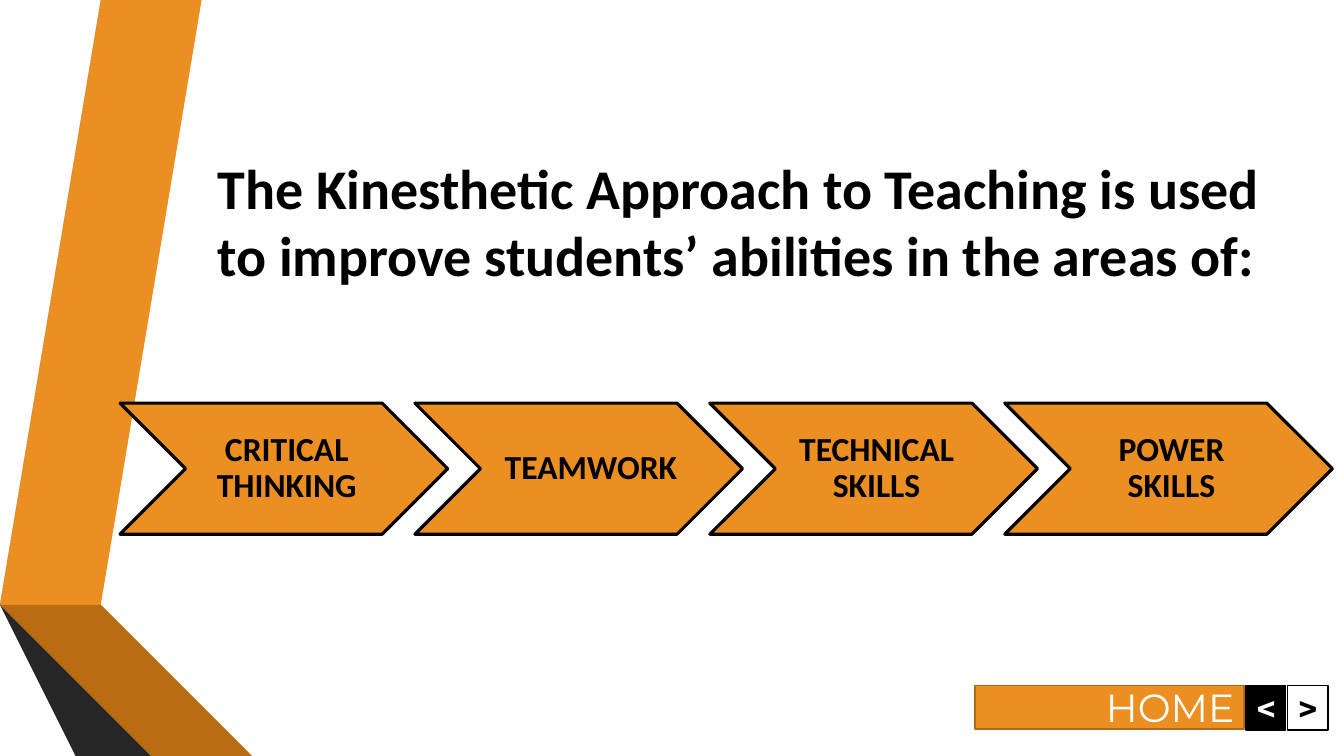
import pptx
import pptx.util
import pptx.dml.color
import pptx.enum.shapes
import pptx.enum.text

Inches = pptx.util.Inches
Pt = pptx.util.Pt
RGB = pptx.dml.color.RGBColor
SHAPE = pptx.enum.shapes.MSO_SHAPE
ALIGN = pptx.enum.text.PP_ALIGN
ANCHOR = pptx.enum.text.MSO_ANCHOR

ORANGE = RGB(0xEB, 0x8F, 0x22)
RUST = RGB(0xB9, 0x6C, 0x11)
BROWN = RGB(0x7B, 0x48, 0x0B)
EDGE = RGB(0xAE, 0x6A, 0x19)
GRAY = RGB(0x59, 0x59, 0x59)
DARK = RGB(0x40, 0x40, 0x40)
COAL = RGB(0x26, 0x26, 0x26)
BLACK = RGB(0, 0, 0)
WHITE = RGB(0xFF, 0xFF, 0xFF)

# Content
TITLE = ("The Kinesthetic Approach to Teaching is used "
         "to improve students’ abilities in the areas of:")
PAD = (0.1, 0.04, 0.04, 0.04)
SKILLS = [
    ("CRITICAL THINKING", ALIGN.CENTER, PAD),
    ("TEAMWORK", ALIGN.RIGHT, (0, 0, 0, 0)),
    ("TECHNICAL SKILLS", ALIGN.CENTER, PAD),
    ("POWER SKILLS", ALIGN.CENTER, PAD),
]
# Label, left, width, height, fill, line, text colour, size, bold
BUTTONS = [
    ("<", 12.36, 0.39, 0.44, BLACK, BLACK, WHITE, 24, True),
    (">", 12.77, 0.4, 0.44, WHITE, BLACK, BLACK, 24, True),
    ("HOME", 9.67, 2.67, 0.43, ORANGE, EDGE, WHITE, 28, False),
]
RIBBONS = [
    (ORANGE, [(0.5, 5.78), (0.77, 5.83), (1.73, 0), (1.45, 0)]),
    (GRAY, [(1.39, 0), (1.11, 0), (0.16, 5.73), (0.44, 5.77)]),
    (COAL, [(0.16, 5.73), (1.45, 7.5), (1.51, 7.5)]),
    (BROWN, [(0.5, 5.79), (2.08, 7.5), (2.14, 7.5)]),
    (RUST, [(0.5, 5.79), (2.14, 7.5), (2.83, 7.5), (0.77, 5.83), (0.5, 5.78)]),
    (DARK, [(2.02, 7.5), (0.48, 5.83), (0.43, 5.78), (0.44, 5.77),
            (0.16, 5.73), (1.51, 7.5)]),
]

deck = pptx.Presentation()
deck.slide_width, deck.slide_height = Inches(13.33), Inches(7.5)
slide = deck.slides.add_slide(deck.slide_layouts[6])
shapes = slide.shapes


def paint(shape, fill, line=None, width=0):
    shape.shadow.inherit = False
    shape.fill.solid()
    shape.fill.fore_color.rgb = fill
    if line is None:
        shape.line.fill.background()
    else:
        shape.line.color.rgb = line
        shape.line.width = Pt(width)


def write(shape, text, size=24, font="Calibri", color=BLACK, bold=True,
          align=ALIGN.LEFT, anchor=ANCHOR.MIDDLE, pad=(0.1, 0.05, 0.1, 0.05),
          space=1.0):
    frame = shape.text_frame
    frame.word_wrap = True
    frame.vertical_anchor = anchor
    (frame.margin_left, frame.margin_top,
     frame.margin_right, frame.margin_bottom) = map(Inches, pad)
    para = frame.paragraphs[0]
    para.alignment = align
    para.line_spacing = space
    run = para.add_run()
    run.text = text
    run.font.size = Pt(size)
    run.font.name = font
    run.font.bold = bold
    run.font.color.rgb = color


def box(*at):
    return shapes.add_textbox(*map(Inches, at))


# Folded ribbons
for color, points in RIBBONS:
    pen = shapes.build_freeform(*points[0], scale=Inches(1))
    pen.add_line_segments(points[1:], close=True)
    paint(pen.convert_to_shape(), color)

# Navigation buttons
for label, left, wide, high, fill, line, color, size, bold in BUTTONS:
    button = shapes.add_shape(
        SHAPE.RECTANGLE, *map(Inches, (left, 6.8, wide, high)))
    paint(button, fill, line, 1.25)
    write(button, label, size=size, font="Montserrat", color=color,
          bold=bold, align=ALIGN.RIGHT)

# Title
write(box(2.06, 1.47, 10.58, 2.12), TITLE, size=40, anchor=ANCHOR.TOP)

# Chevron row: each overlaps the next by a tenth of its width
LEFT, TOP, WIDE, HIGH = 1.19, 4, 3.25, 1.3
for i, (skill, align, pad) in enumerate(SKILLS):
    x = LEFT + i * WIDE * 0.9
    arrow = shapes.add_shape(
        SHAPE.CHEVRON, *map(Inches, (x, TOP, WIDE, HIGH)))
    paint(arrow, ORANGE, BLACK, 2.25)
    write(box(x + HIGH / 2, TOP, WIDE - HIGH, HIGH), skill,
          align=align, pad=pad, space=0.9)

deck.save("out.pptx")
